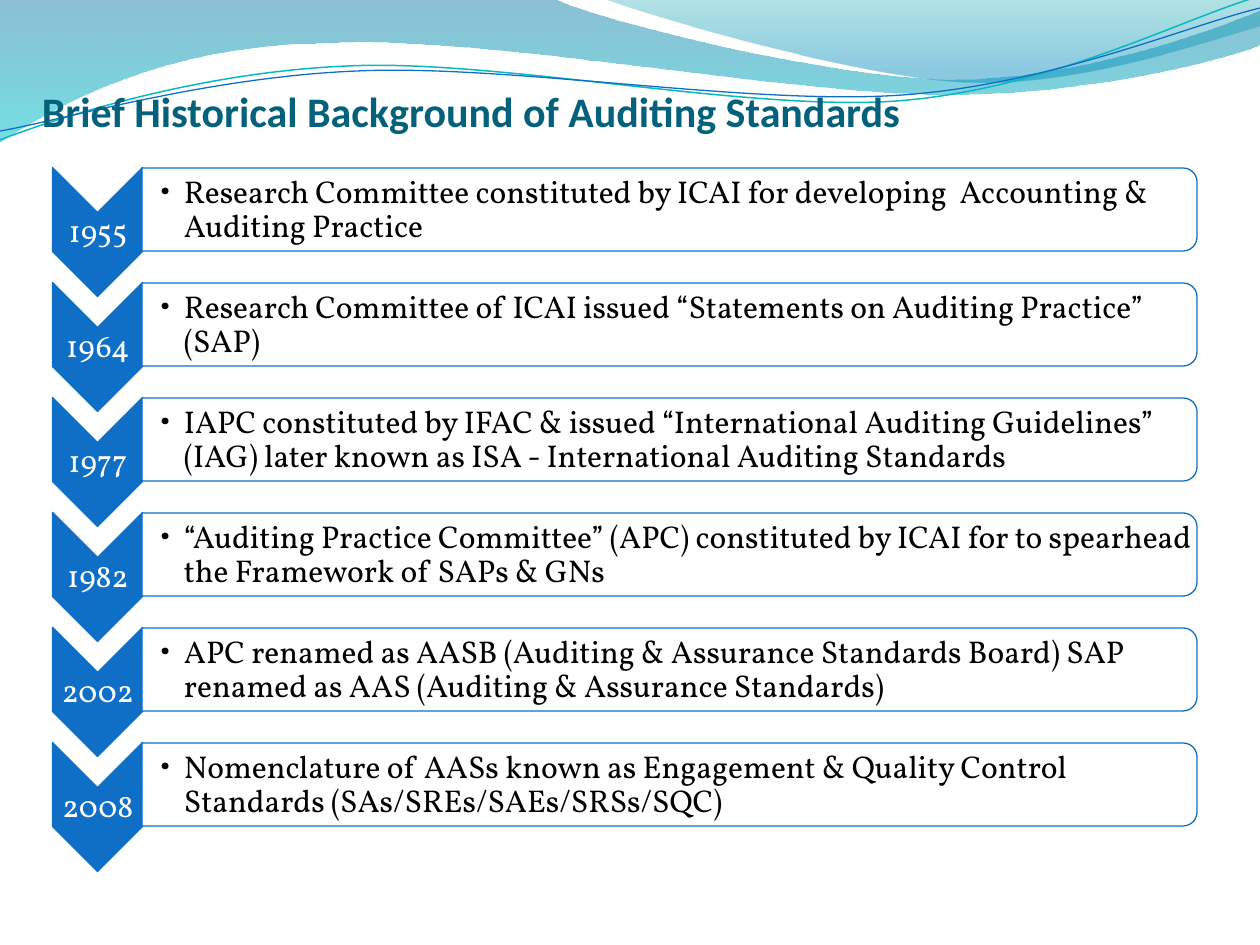
import math

import pptx
import pptx.dml.color
import pptx.enum.shapes
import pptx.enum.text
import pptx.oxml.ns
import pptx.util
from lxml import etree

PX = 7257
BLUE = "0F6FC6"
TILT = 2.7
qn = pptx.oxml.ns.qn
MIDDLE = pptx.enum.text.MSO_ANCHOR.MIDDLE
BOTTOM = pptx.enum.text.MSO_ANCHOR.BOTTOM
CENTER = pptx.enum.text.PP_ALIGN.CENTER
LEFT = pptx.enum.text.PP_ALIGN.LEFT
SHAPES = pptx.enum.shapes.MSO_SHAPE


def color(value):
    return pptx.dml.color.RGBColor.from_string(value)


def add_text(text, box, margins, anchor, paragraph_format, font_format):
    shape = slide.shapes.add_textbox(*[PX * value for value in box])
    frame = shape.text_frame
    frame.word_wrap = True
    frame.vertical_anchor = anchor
    for side, margin in zip(("left", "top", "right", "bottom"), margins):
        setattr(frame, f"margin_{side}", PX * margin)
    paragraph = frame.paragraphs[0]
    for name, value in paragraph_format.items():
        setattr(paragraph, name, value)
    run = paragraph.add_run()
    run.text = text
    for name, value in font_format.items():
        if name == "color":
            run.font.color.rgb = color(value)
        else:
            setattr(run.font, name, value)
    return paragraph


presentation = pptx.Presentation()
presentation.slide_width = 1260 * PX
presentation.slide_height = 945 * PX
slide = presentation.slides.add_slide(presentation.slide_layouts[6])

waves = [
    {"start": (0, 0), "stops": [(0, "0074A1", 45), (1, "00C6CF", 55)],
     "segments": [(554, -1), (600, 21, 837, 79, 955, 79), (1075, 79, 1207, 33, 1260, 11),
                  (1261, 45), (1238, 55, 1096, 96, 940, 94), (784, 94, 481, 35, 324, 43),
                  (163, 45, 58, 105, -1, 142)]},
    {"start": (604, -1), "stops": [(0, "00A1A9", 30), (0.8, "008BBF", 45)],
     "segments": [(641, 14, 859, 78, 969, 82), (1079, 86, 1211, 40, 1260, 26), (1260, 0)]},
    {"start": (0, 140), "line": ("0AB8BF", 0.85), "center": (629, 72),
     "segments": [(60, 117, 199, 72, 349, 66), (498, 59, 747, 112, 898, 101),
                  (1050, 89, 1182, 19, 1257, -3)]},
    {"start": (0, 131), "line": (BLUE, 0.75), "center": (629, 74),
     "segments": [(59, 121, 207, 77, 357, 71), (508, 64, 752, 106, 903, 95),
                  (1053, 84, 1186, 26, 1260, 8)]},
]

for wave in waves:
    points = [wave["start"]]
    for segment in wave["segments"]:
        points.extend(zip(segment[::2], segment[1::2]))
    if "center" in wave:
        center_x, center_y = wave["center"]
        cosine, sine = math.cos(math.radians(TILT)), math.sin(math.radians(TILT))
        points = [(center_x + (x - center_x) * cosine - (y - center_y) * sine,
                   center_y + (x - center_x) * sine + (y - center_y) * cosine) for x, y in points]
    corners = [(round(x * PX), round(y * PX)) for x, y in points]
    builder = slide.shapes.build_freeform(*corners[0])
    builder.add_line_segments(corners[1:], close="stops" in wave)
    shape = builder.convert_to_shape()
    shape.shadow.inherit = False

    edges = iter(list(shape.element.iter(qn("a:lnTo"))))
    for segment in wave["segments"]:
        edge = next(edges)
        if len(segment) == 6:
            edge.tag = qn("a:cubicBezTo")
            for follower in (next(edges), next(edges)):
                edge.append(follower[0])
                follower.getparent().remove(follower)

    if "stops" in wave:
        shape.line.fill.background()
        shape.fill.gradient()
        shape.fill.gradient_angle = 270
        for stop, (position, value, opacity) in zip(shape.fill.gradient_stops, wave["stops"]):
            stop.position = position
            stop.color.rgb = color(value)
        for element, (position, value, opacity) in zip(shape.element.iter(qn("a:srgbClr")), wave["stops"]):
            etree.SubElement(element, qn("a:alpha"), val=str(opacity * 1000))
    else:
        shape.rotation = 360 - TILT
        shape.fill.background()
        shape.line.color.rgb = color(wave["line"][0])
        shape.line.width = pptx.util.Pt(wave["line"][1])

add_text("Brief Historical Background of Auditing Standards", (42, 42, 1176, 94), (0, 6, 0, 0), BOTTOM,
         {"alignment": LEFT},
         {"name": "Calibri", "size": pptx.util.Pt(24), "bold": True, "color": "04617B"})

milestones = [
    ("1955", "Research Committee constituted by ICAI for developing  Accounting & Auditing Practice"),
    ("1964", "Research Committee of ICAI issued “Statements on Auditing Practice” (SAP)"),
    ("1977", "IAPC constituted by IFAC & issued “International Auditing Guidelines” (IAG) "
             "later known as ISA - International Auditing Standards"),
    ("1982", "“Auditing Practice Committee” (APC) constituted by ICAI for to spearhead "
             "the Framework of SAPs & GNs"),
    ("2002", "APC renamed as AASB (Auditing & Assurance Standards Board) "
             "SAP renamed as AAS (Auditing & Assurance Standards)"),
    ("2008", "Nomenclature of AASs known as Engagement & Quality Control Standards "
             "(SAs/SREs/SAEs/SRSs/SQC)"),
]
body_font = {"name": "Vollkorn", "size": pptx.util.Pt(18)}

for row, (year, event) in enumerate(milestones):
    offset = 115 * row
    for kind, (left, top, width, height), fill, opacity in [
        (SHAPES.CHEVRON, (33, 187, 129, 90), BLUE, 100),
        (SHAPES.ROUND_2_SAME_RECTANGLE, (628, -318, 83, 1055), "FFFFFF", 90),
    ]:
        shape = slide.shapes.add_shape(kind, PX * left, PX * (top + offset), PX * width, PX * height)
        shape.rotation = 90
        shape.shadow.inherit = False
        shape.fill.solid()
        shape.fill.fore_color.rgb = color(fill)
        etree.SubElement(next(shape.element.iter(qn("a:srgbClr"))), qn("a:alpha"), val=str(opacity * 1000))
        shape.line.color.rgb = color(BLUE)
        shape.line.width = pptx.util.Pt(0.75)
    add_text(year, (53, 213 + offset, 90, 39), (1, 1, 1, 1), MIDDLE,
             {"alignment": CENTER, "line_spacing": 0.9}, {**body_font, "color": "FFFFFF"})
    paragraph = add_text(event, (142, 172 + offset, 1051, 76), (18, 1, 1, 1), MIDDLE,
                         {"alignment": LEFT, "line_spacing": 0.9, "level": 1},
                         {**body_font, "color": "000000"})
    properties = paragraph._p.get_or_add_pPr()
    properties.set("marL", str(24 * PX))
    properties.set("indent", str(-24 * PX))
    etree.SubElement(properties, qn("a:buFont"), typeface="Vollkorn")
    etree.SubElement(properties, qn("a:buChar"), char="•")

presentation.save("out.pptx")
